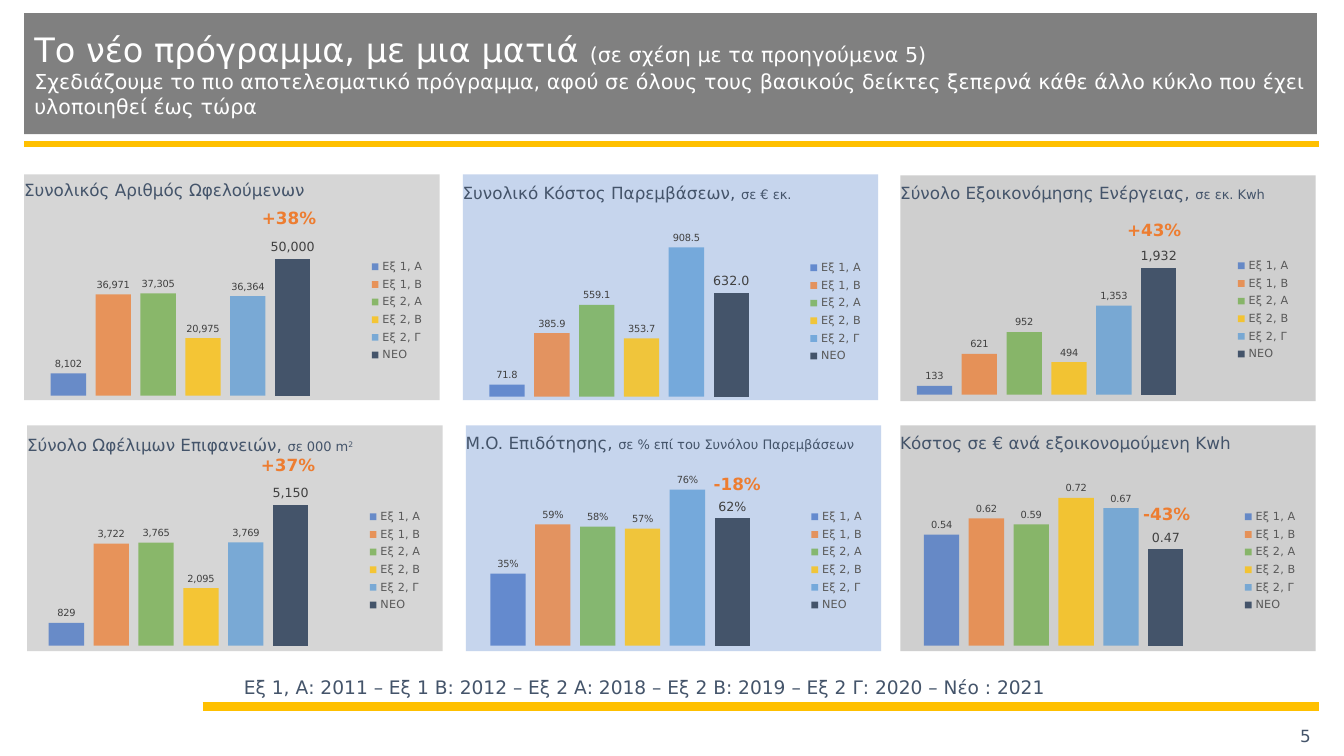
from dataclasses import dataclass

from lxml import etree
from pptx import Presentation
from pptx.chart.data import CategoryChartData
from pptx.dml.color import RGBColor
from pptx.enum.chart import XL_CHART_TYPE, XL_LABEL_POSITION, XL_LEGEND_POSITION
from pptx.enum.shapes import MSO_CONNECTOR, MSO_SHAPE
from pptx.enum.text import MSO_ANCHOR, MSO_AUTO_SIZE, PP_ALIGN
from pptx.oxml import parse_xml
from pptx.oxml.ns import nsdecls, qn
from pptx.util import Emu, Pt

COLUMNS = XL_CHART_TYPE.COLUMN_CLUSTERED
OUTSIDE_END = XL_LABEL_POSITION.OUTSIDE_END
LEGEND_RIGHT = XL_LEGEND_POSITION.RIGHT
STRAIGHT = MSO_CONNECTOR.STRAIGHT
RECTANGLE = MSO_SHAPE.RECTANGLE
TOP, MIDDLE = MSO_ANCHOR.TOP, MSO_ANCHOR.MIDDLE
LEFT, RIGHT = PP_ALIGN.LEFT, PP_ALIGN.RIGHT
NO_AUTOFIT = MSO_AUTO_SIZE.NONE
TITLE_ONLY_LAYOUT = 5


@dataclass(frozen=True)
class Theme:
    font: str = "DejaVu Sans"
    white: str = "FFFFFF"
    banner: str = "808080"
    rule: str = "FFC000"
    ink: str = "44546A"
    accent: str = "ED7D31"
    label: str = "404040"
    legend: str = "595959"
    gray: str = "C9C9C9"
    dark_gray: str = "BFBFBF"
    blue: str = "B4C7E7"
    alpha: int = 75
    title_size: float = 24
    subtitle_size: float = 14.7
    key_size: float = 13.3
    heading_size: float = 12
    unit_size: float = 9.3
    legend_size: float = 8
    label_size: float = 7
    new_label_size: float = 9


THEME = Theme()
SERIES = [("Εξ 1, Α ", "4472C4"), ("Εξ 1, Β", "ED7D31"), ("Εξ 2, Α", "70AD47"),
          ("Εξ 2, Β ", "FFC000"), ("Εξ 2, Γ", "5B9BD5"), ("NEO", THEME.ink)]
PANEL_SIZE = (412, 224)
CHART_SIZE = (433, 191)
PLOT_LAYOUT = {"layoutTarget": "inner", "xMode": "edge", "yMode": "edge",
               "x": 0.023, "y": 0.087, "w": 0.772, "h": 0.853}

# Offsets are measured from the top left corner of each panel
PANELS = [
    dict(at=(24, 173), fill=THEME.gray, heading="Συνολικός Αριθμός Ωφελούμενων", unit="",
         heading_top=0, chart_at=(-22, 40), number_format="#,##0",
         values=(8102, 36971, 37305, 20975, 36364, 50000), change="+38%", change_at=(226, 28)),
    dict(at=(459, 173), fill=THEME.blue, heading="Συνολικό Κόστος Παρεμβάσεων, ", unit="σε € εκ.",
         heading_top=3, chart_at=(-22, 41), number_format="#,##0.0",
         values=(71.8, 385.9, 559.1, 353.7, 908.5, 632.0)),
    dict(at=(893, 174), fill=THEME.dark_gray, heading="Σύνολο Εξοικονόμησης Ενέργειας, ",
         unit="σε εκ. Kwh", heading_top=2, chart_at=(-32, 38), number_format="#,##0",
         values=(133, 621, 952, 494, 1353, 1932), change="+43%", change_at=(215, 39)),
    dict(at=(27, 422), fill=THEME.gray, heading="Σύνολο Ωφέλιμων Επιφανειών, ", unit="σε 000 m",
         power="2", heading_top=4, chart_at=(-27, 39), number_format="#,##0",
         values=(829, 3722, 3765, 2095, 3769, 5150), change="+37%", change_at=(222, 24)),
    dict(at=(462, 422), fill=THEME.blue, heading="Μ.O. Επιδότησης, ",
         unit="σε % επί του Συνόλου Παρεμβάσεων", heading_top=2, chart_at=(-24, 39),
         number_format="0%", values=(0.35, 0.59, 0.58, 0.57, 0.76, 0.62),
         change="-18%", change_at=(236, 43)),
    dict(at=(893, 422), fill=THEME.dark_gray, heading="Κόστος σε € ανά εξοικονομούμενη Kwh",
         unit="", heading_top=2, chart_at=(-25, 39), number_format="#,##0.00",
         values=(0.54, 0.62, 0.59, 0.72, 0.67, 0.47), change="-43%", change_at=(231, 73)),
]


def px(*lengths):
    return [Emu(length * 9144) for length in lengths]


def format_font(font, size, color, bold=False):
    for name, value in dict(name=THEME.font, size=Pt(size), bold=bold).items():
        setattr(font, name, value)
    font.color.rgb = RGBColor.from_string(color)


def fill_solid(fill, color, alpha=100):
    fill.solid()
    fill.fore_color.rgb = RGBColor.from_string(color)
    if alpha < 100:
        for element in fill._xPr.iter(qn("a:srgbClr")):
            etree.SubElement(element, qn("a:alpha"), val=str(alpha * 1000))


def write_text(shape, runs, color, anchor=TOP, align=LEFT, bold=False):
    """Fill a shape with (text, size) runs; a line feed is a line break."""
    frame = shape.text_frame
    settings = dict(word_wrap=True, auto_size=NO_AUTOFIT, vertical_anchor=anchor)
    for name, value in settings.items():
        setattr(frame, name, value)
    paragraph = frame.paragraphs[0]
    paragraph.alignment = align
    for text, size in runs:
        if text == "\n":
            paragraph.add_line_break()
            continue
        run = paragraph.add_run()
        run.text = text
        format_font(run.font, size, color, bold)
    return paragraph


def add_text(slide, box, runs, color, **options):
    return write_text(slide.shapes.add_textbox(*px(*box)), runs, color, **options)


def add_rule(slide, left, right, y, width):
    line = slide.shapes.add_connector(STRAIGHT, *px(left, y, right, y))
    line.line.color.rgb = RGBColor.from_string(THEME.rule)
    line.line.width = Pt(width)
    etree.SubElement(line._element.spPr, qn("a:effectLst"))


def add_banner(slide, box):
    title = slide.shapes.title
    for name, value in zip(("left", "top", "width", "height"), px(*box)):
        setattr(title, name, value)
    fill_solid(title.fill, THEME.banner)
    write_text(title, [
        ("Το νέο πρόγραμμα, με μια ματιά ", THEME.title_size),
        ("(σε σχέση με τα προηγούμενα 5)", THEME.subtitle_size),
        ("\n", THEME.subtitle_size),
        ("Σχεδιάζουμε το πιο αποτελεσματικό πρόγραμμα, αφού σε όλους τους βασικούς δείκτες "
         "ξεπερνά κάθε άλλο κύκλο που έχει υλοποιηθεί έως τώρα", THEME.subtitle_size),
    ], THEME.white, anchor=MIDDLE)


def set_chart_background(chart):
    """Make the chart transparent and fix its inner plot area."""
    space = chart._chartSpace
    plot_area = space.chart.plotArea
    clear = f"<c:spPr {nsdecls('c', 'a')}><a:noFill/><a:ln><a:noFill/></a:ln></c:spPr>"
    space.chart.addnext(parse_xml(clear))
    plot_area.append(parse_xml(clear))
    for layout in plot_area.findall(qn("c:layout")):
        plot_area.remove(layout)
    layout = etree.Element(qn("c:layout"))
    manual = etree.SubElement(layout, qn("c:manualLayout"))
    for name, value in PLOT_LAYOUT.items():
        etree.SubElement(manual, qn(f"c:{name}"), val=str(value))
    plot_area.insert(0, layout)


def add_column_chart(slide, box, values, number_format):
    data = CategoryChartData(number_format=number_format)
    data.categories = ["1"]
    for (name, _), value in zip(SERIES, values):
        data.add_series(name, [value])
    chart = slide.shapes.add_chart(COLUMNS, *px(*box), data).chart
    chart.has_title = False
    chart.font.name, chart.font.size = THEME.font, Pt(10)
    chart.has_legend = True
    chart.legend.position = LEGEND_RIGHT
    chart.legend.include_in_layout = False
    format_font(chart.legend.font, THEME.legend_size, THEME.legend)
    chart.value_axis.minimum_scale = 0
    for axis in (chart.category_axis, chart.value_axis):
        axis.has_major_gridlines = False
        axis.visible = False
    plot = chart.plots[0]
    for name, value in dict(gap_width=219, overlap=-27, vary_by_categories=False).items():
        setattr(plot, name, value)
    for series, (name, color) in zip(plot.series, SERIES):
        is_new = name == "NEO"
        fill_solid(series.format.fill, color, 100 if is_new else THEME.alpha)
        labels = series.data_labels
        settings = dict(show_value=True, position=OUTSIDE_END, number_format=number_format,
                        number_format_is_linked=False)
        for key, value in settings.items():
            setattr(labels, key, value)
        format_font(labels.font, THEME.new_label_size if is_new else THEME.label_size, THEME.label)
    set_chart_background(chart)


def add_panel(slide, box, panel):
    left, top, width, height = box
    # Background
    card = slide.shapes.add_shape(RECTANGLE, *px(*box))
    card.shadow.inherit = False
    card.line.fill.background()
    fill_solid(card.fill, panel["fill"], THEME.alpha)
    # Chart
    x, y = panel["chart_at"]
    add_column_chart(slide, (left + x, top + y, *CHART_SIZE),
                     panel["values"], panel["number_format"])
    # Heading
    runs = [(panel["heading"], THEME.heading_size), (panel["unit"], THEME.unit_size),
            (panel.get("power", ""), THEME.unit_size)]
    heading = add_text(slide, (left - 10, top + panel["heading_top"], width + 14, 30),
                       [run for run in runs if run[0]], THEME.ink, anchor=MIDDLE)
    if "power" in panel:
        heading.runs[-1].font._element.set("baseline", "30000")
    # Change against the best earlier programme
    if "change" in panel:
        x, y = panel["change_at"]
        add_text(slide, (left + x, top + y, 80, 30), [(panel["change"], THEME.heading_size)],
                 THEME.accent, bold=True)


def add_footer(slide, box):
    left, top, width, height = box
    add_text(slide, (left + 31, top, 861, 33),
             [("Εξ 1, Α: 2011 – Εξ 1 Β: 2012 – Εξ 2 Α: 2018 – Εξ 2 Β: 2019 – "
               "Εξ 2 Γ: 2020 – Νέο : 2021", THEME.key_size)], THEME.ink)
    add_rule(slide, left, left + width, top + 35, 6)
    add_text(slide, (left + width - 298, top + height - 40, 300, 40),
             [("5", THEME.heading_size)], THEME.ink, anchor=MIDDLE, align=RIGHT)


def main():
    presentation = Presentation()
    presentation.slide_width, presentation.slide_height = px(1333, 750)
    slide = presentation.slides.add_slide(presentation.slide_layouts[TITLE_ONLY_LAYOUT])
    add_banner(slide, (24, 13, 1282, 120))
    add_rule(slide, 24, 1308, 143, 4.5)
    for panel in PANELS:
        add_panel(slide, (*panel["at"], *PANEL_SIZE), panel)
    add_footer(slide, (201, 666, 1107, 84))
    presentation.save("out.pptx")


if __name__ == "__main__":
    main()
